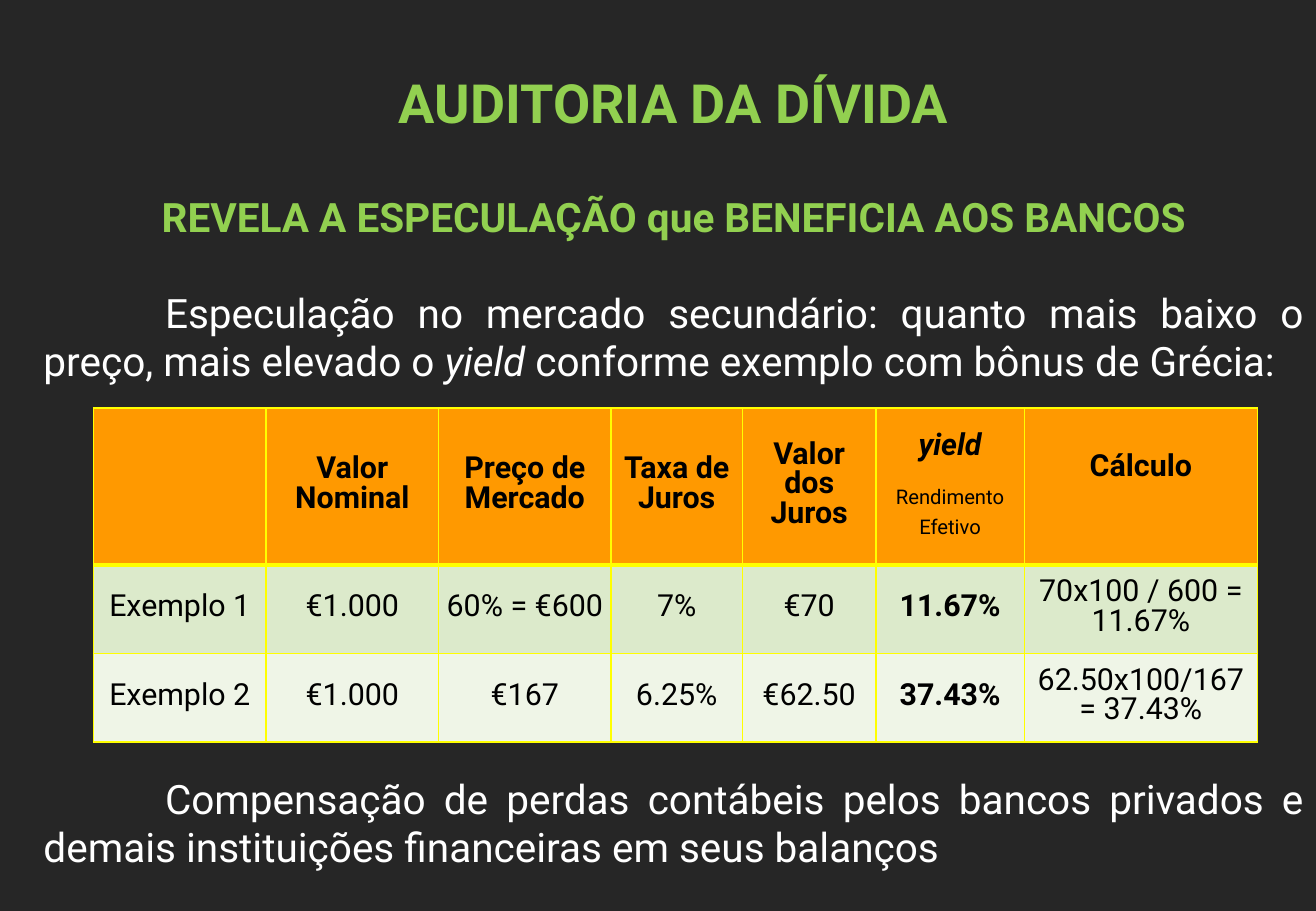
from lxml.etree import SubElement as Sub
from pptx import Presentation
from pptx.dml.color import RGBColor as Rgb
from pptx.enum.text import MSO_ANCHOR as Anchor, PP_ALIGN as Align
from pptx.oxml.ns import qn
from pptx.util import Inches as In, Pt

HEX = {"back": "262626", "lime": "92D050", "white": "FFFFFF", "ink": "000000",
       "head": "FF9900", "odd": "DCEACB", "even": "EFF5E7", "edge": "FFFF00"}
FONT = "Roboto"
WIDE, HIGH = 10.83, 7.5
LEFT = 0.26

TITLE = "AUDITORIA DA DÍVIDA"
LEAD = [("REVELA A ESPECULAÇÃO que BENEFICIA AOS BANCOS", "b")]
INTRO = [("Especulação no mercado secundário: quanto mais baixo o preço, "
          "mais elevado o ", ""), ("yield ", "i"),
         ("conforme exemplo com bônus de Grécia:", "")]
CLOSE = [("Compensação de perdas contábeis pelos bancos privados e demais "
          "instituições financeiras em seus balanços", "")]

HEADS = ["", "Valor Nominal", "Preço de Mercado", "Taxa de Juros",
         "Valor dos Juros", "yield", "Cálculo"]
NOTE = "Rendimento Efetivo"
ROWS = [
    ["Exemplo 1", "€1.000", "60% = €600", "7%", "€70", "11.67%",
     "70x100 / 600 = 11.67%"],
    ["Exemplo 2", "€1.000", "€167", "6.25%", "€62.50", "37.43%",
     "62.50x100/167= 37.43%"],
]
COLS = [1.42, 1.42, 1.42, 1.08, 1.1, 1.22, 1.92]
TALL = [1.29, 0.73, 0.73]
YIELD, CALC = 5, 6


def add_run(para, text, size, hue, mark=""):
    run = para.add_run()
    run.text = text
    font = run.font
    font.name, font.size = FONT, Pt(size)
    font.bold, font.italic = "b" in mark, "i" in mark
    font.color.rgb = Rgb.from_string(HEX[hue])


def set_box(shape, mid, tall):
    shape.left, shape.top = In(LEFT), In(mid - tall / 2)
    shape.width, shape.height = In(WIDE - LEFT), In(tall)
    frame = shape.text_frame
    frame.word_wrap = True
    frame.vertical_anchor = Anchor.MIDDLE
    return frame.paragraphs[0]


def add_text(slide, parts, mid, tall, hue, align, indent=0):
    para = set_box(slide.shapes.add_textbox(0, 0, 0, 0), mid, tall)
    para.alignment = align
    if indent:
        para._p.get_or_add_pPr().set("indent", str(In(indent)))
    for text, mark in parts:
        add_run(para, text, 24, hue, mark)


def set_edge(cell, sides):
    props = cell._tc.get_or_add_tcPr()
    for spot, (side, width) in enumerate(sides.items()):
        line = Sub(props, qn("a:ln" + side), w=str(Pt(width)))
        Sub(Sub(line, qn("a:solidFill")), qn("a:srgbClr"), val=HEX["edge"])
        props.remove(line)
        props.insert(spot, line)


def fill_cell(cell, lines, hue):
    cell.fill.solid()
    cell.fill.fore_color.rgb = Rgb.from_string(HEX[hue])
    cell.vertical_anchor = Anchor.MIDDLE
    cell.margin_left = cell.margin_right = In(0.05)
    cell.margin_top = cell.margin_bottom = 0
    frame = cell.text_frame
    for spot, (text, size, mark) in enumerate(lines):
        para = frame.add_paragraph() if spot else frame.paragraphs[0]
        para.alignment = Align.CENTER
        para.line_spacing, para.space_after = Pt(17.6), Pt(10)
        add_run(para, text, size, "ink", mark)


def cell_lines(row, col, text):
    if not text:
        return []
    if row == 0 and col == YIELD:
        return [(text, 18, "bi"), (NOTE, 12, "")]
    return [(text, 18, "b" if row == 0 or col == YIELD else "")]


def add_grid(slide):
    grid = slide.shapes.add_table(len(TALL), len(COLS), In(0.77), In(3.36),
                                  In(sum(COLS)), In(sum(TALL))).table
    grid.first_row = grid.horz_banding = False
    for col, width in enumerate(COLS):
        grid.columns[col].width = In(width)
    for row, texts in enumerate([HEADS] + ROWS):
        grid.rows[row].height = In(TALL[row])
        for col, text in enumerate(texts):
            cell = grid.cell(row, col)
            fill_cell(cell, cell_lines(row, col, text),
                      ("head", "odd", "even")[row])
            set_edge(cell, {"L": 1, "R": 1, "T": 3 if row == 1 else 1,
                            "B": 3 if row == 0 else 1})
    calc = grid.cell(0, CALC)
    calc.vertical_anchor, calc.margin_top = Anchor.TOP, In(0.38)


def main():
    deck = Presentation()
    deck.slide_width, deck.slide_height = In(WIDE), In(HIGH)
    slide = deck.slides.add_slide(deck.slide_layouts[5])
    back = slide.background.fill
    back.solid()
    back.fore_color.rgb = Rgb.from_string(HEX["back"])
    head = set_box(slide.shapes.title, 0.84, 0.7)
    head.alignment = Align.CENTER
    add_run(head, TITLE, 32, "lime", "b")
    add_text(slide, LEAD, 1.78, 0.5, "lime", Align.CENTER)
    add_text(slide, INTRO, 2.77, 0.9, "white", Align.JUSTIFY, 1)
    add_grid(slide)
    add_text(slide, CLOSE, 6.77, 0.9, "white", Align.JUSTIFY, 1)
    deck.save("out.pptx")


if __name__ == "__main__":
    main()
